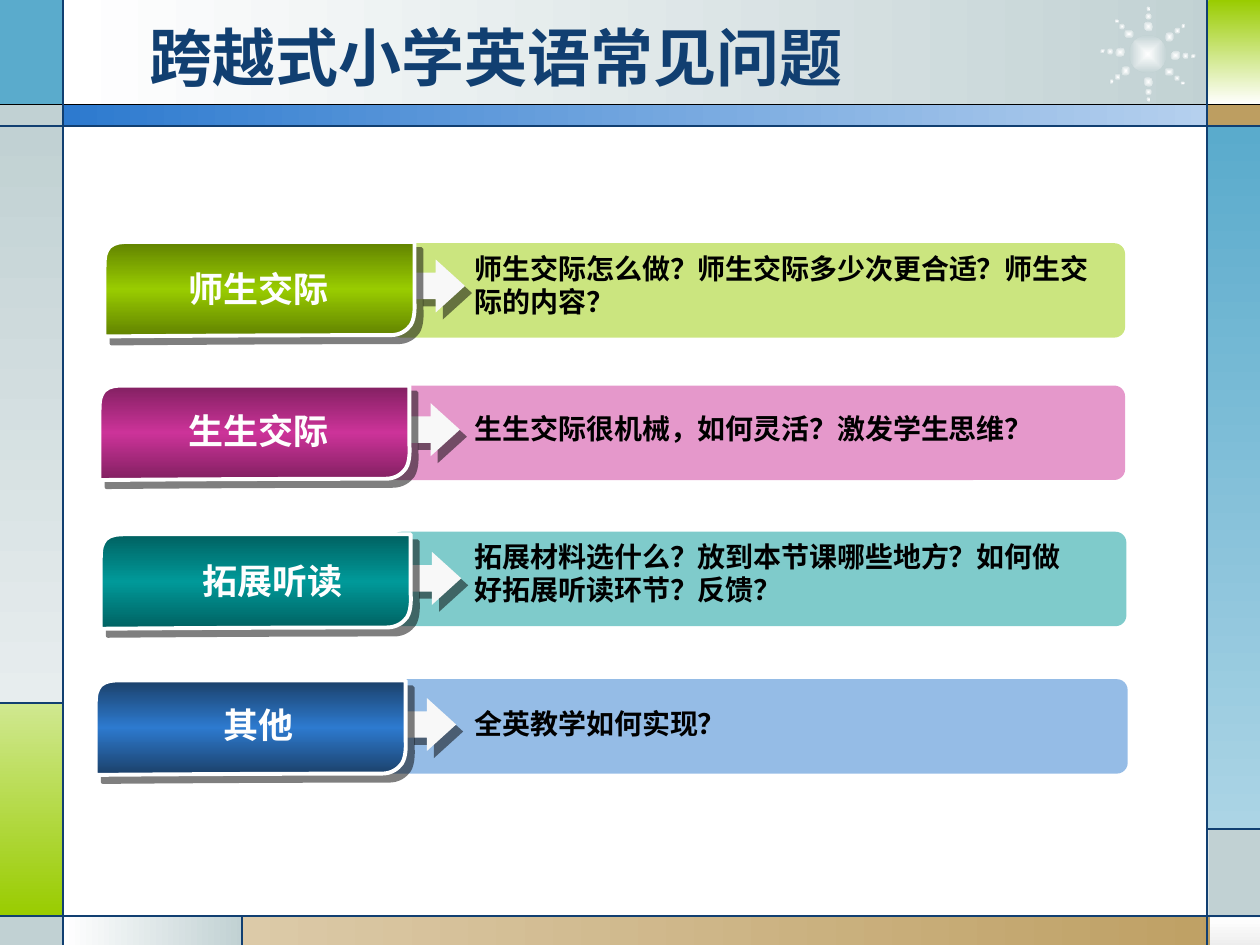
from math import cos, radians, sin

from lxml.etree import SubElement
from pptx import Presentation
from pptx.dml.color import RGBColor
from pptx.enum.shapes import MSO_CONNECTOR, MSO_SHAPE
from pptx.enum.text import MSO_ANCHOR, PP_ALIGN
from pptx.oxml.ns import qn
from pptx.util import Inches, Pt

FONT = "Noto Sans CJK SC"
COLORS = {
    "white": "FFFFFF", "mist": "C1D1D3", "pale mist": "E7EDEE", "sky": "5AABCC",
    "pale sky": "ABD4E5", "lime": "99CC00", "dark lime": "618200", "pale lime": "D0E890",
    "sand": "BD9E61", "pale sand": "DCCAA8", "pearl": "EDEDED", "blue": "2D7ACF",
    "dark blue": "1B4069", "pale blue": "B5D0EE", "pink": "CC3399", "dark pink": "822061",
    "teal": "009999", "dark teal": "006161", "navy": "113F71", "black": "000000",
    "label": "FEFEFE", "arrow": "F8F8F8",
}

presentation = Presentation()
presentation.slide_width = Inches(10)
presentation.slide_height = Inches(7.5)
slide = presentation.slides.add_slide(presentation.slide_layouts[6])
shapes = slide.shapes


def paint(shape, colors, angle=None, alpha=None, shadow=False):
    """Fill with one colour, or with an even gradient (from the centre if angle is None)."""
    shape.line.fill.background()
    shape.shadow.inherit = False
    properties = shape.element.spPr
    if len(colors) == 1:
        shape.fill.solid()
        shape.fill.fore_color.rgb = RGBColor.from_string(COLORS[colors[0]])
        if alpha:
            color = properties.find(qn("a:solidFill"))[0]
            SubElement(color, qn("a:alpha"), val=str(alpha * 1000))
    else:
        shape.fill.gradient()
        gradient = properties.find(qn("a:gradFill"))
        for child in list(gradient):
            gradient.remove(child)
        stops = SubElement(gradient, qn("a:gsLst"))
        for index, name in enumerate(colors):
            position = 100000 * index // (len(colors) - 1)
            stop = SubElement(stops, qn("a:gs"), pos=str(position))
            SubElement(stop, qn("a:srgbClr"), val=COLORS[name])
        if angle is None:
            center = SubElement(gradient, qn("a:path"), {"path": "shape"})
            SubElement(center, qn("a:fillToRect"), dict.fromkeys("ltrb", "50000"))
        else:
            SubElement(gradient, qn("a:lin"), ang=str(angle * 60000), scaled="0")
    if shadow:
        effects = properties.find(qn("a:effectLst"))
        outer = SubElement(effects, qn("a:outerShdw"), dist=str(Pt(5.7)),
                           dir="2700000", algn="ctr", rotWithShape="0")
        color = SubElement(outer, qn("a:srgbClr"), val=COLORS["black"])
        SubElement(color, qn("a:alpha"), val="50000")


def add_text(text, left, top, width, height, size, color, align=PP_ALIGN.LEFT,
             anchor=MSO_ANCHOR.TOP):
    box = shapes.add_textbox(Inches(left), Inches(top), Inches(width), Inches(height))
    frame = box.text_frame
    frame.word_wrap = True
    frame.vertical_anchor = anchor
    paragraph = frame.paragraphs[0]
    paragraph.alignment = align
    paragraph.line_spacing = Pt(round(size * 1.18, 1))
    run = paragraph.add_run()
    run.text = text
    for name, value in {"size": Pt(size), "bold": True, "name": FONT}.items():
        setattr(run.font, name, value)
    run.font.color.rgb = RGBColor.from_string(COLORS[color])
    SubElement(run.font._element, qn("a:ea"), typeface=FONT)


# Frame panels: left, top, width, height, colours, gradient angle
panels = [
    (0.5, 0, 9.27, 0.84, ["white", "mist"], 0),
    (0, 0, 0.5, 0.84, ["sky"], None),
    (0, 0.83, 0.5, 0.17, ["mist"], None),
    (0, 1, 0.5, 4.58, ["mist", "pale mist"], 90),
    (0, 5.58, 0.5, 1.69, ["pale lime", "lime"], 90),
    (0, 7.28, 0.5, 0.23, ["mist"], None),
    (0.5, 7.27, 1.43, 0.24, ["white", "mist"], 0),
    (1.92, 7.27, 8.08, 0.24, ["pale sand", "sand"], 0),
    (9.6, 7.28, 0.4, 0.23, ["white", "pearl"], 90),
    (9.59, 6.58, 0.41, 0.7, ["mist"], None),
    (9.58, 1, 0.42, 5.58, ["sky", "pale sky"], 90),
    (9.58, 0.83, 0.42, 0.17, ["sand"], None),
    (9.59, 0, 0.41, 0.83, ["lime", "white"], 90),
    (0.5, 0.83, 9.09, 0.17, ["blue", "pale blue"], 0),
]
for left, top, width, height, colors, angle in panels:
    panel = shapes.add_shape(MSO_SHAPE.RECTANGLE, Inches(left), Inches(top),
                             Inches(width), Inches(height))
    paint(panel, colors, angle)

# Sun: a disc and eight rays of three shrinking dots (x, y, width, height, rotation)
sun_x, sun_y = 9.11, 0.43
dots = [(sun_x, sun_y, 0.3, 0.3, 2.5)]
for ray in [39.5, 2.5, 321.5, 89, 271, 227, 184, 143]:
    for radius, width, height in [(0.3, 0.05, 0.05), (0.36, 0.04, 0.03), (0.22, 0.08, 0.07)]:
        dots.append((sun_x + radius * cos(radians(ray)), sun_y + radius * sin(radians(ray)),
                     width, height, ray - 36))
for x, y, width, height, rotation in dots:
    dot = shapes.add_shape(MSO_SHAPE.OVAL, Inches(x - width / 2), Inches(y - height / 2),
                           Inches(width), Inches(height))
    dot.rotation = rotation
    paint(dot, ["white", "mist"])

# Frame lines: start x, start y, end x, end y, colour
frame_lines = [
    (0, 0.83, 10, 0.83, "black"),
    (0, 1, 10, 1, "navy"),
    (0, 7.27, 10, 7.27, "navy"),
    (0.5, 0, 0.5, 7.5, "navy"),
    (9.58, 0, 9.58, 7.5, "navy"),
    (0.5, 5.58, 0, 5.58, "navy"),
    (1.92, 7.27, 1.92, 7.5, "navy"),
    (9.58, 6.58, 10, 6.58, "navy"),
]
for start_x, start_y, end_x, end_y, color in frame_lines:
    line = shapes.add_connector(MSO_CONNECTOR.STRAIGHT, Inches(start_x), Inches(start_y),
                                Inches(end_x), Inches(end_y))
    line.line.width = Pt(0.75)
    line.line.color.rgb = RGBColor.from_string(COLORS[color])
    SubElement(line.element.spPr, qn("a:effectLst"))

add_text("跨越式小学英语常见问题", 1.09, 0.14, 7.33, 0.62, 36, "navy", anchor=MSO_ANCHOR.MIDDLE)

# Tab outline from its top left corner
tab_outline = [
    ("moveTo", [(0.19, 0)]),
    ("lnTo", [(2.46, 0)]),
    ("cubicBezTo", [(2.46, 0), (2.46, 0.24), (2.46, 0.48)]),
    ("cubicBezTo", [(2.46, 0.48), (2.47, 0.6), (2.43, 0.66)]),
    ("cubicBezTo", [(2.4, 0.7), (2.35, 0.74), (2.27, 0.74)]),
    ("cubicBezTo", [(1.12, 0.74), (0, 0.75), (0, 0.75)]),
    ("lnTo", [(0, 0.21)]),
    ("cubicBezTo", [(0, 0.1), (0.01, 0.08), (0.04, 0.04)]),
    ("cubicBezTo", [(0.08, 0), (0.15, 0), (0.19, 0)]),
    ("close", []),
]

# Rows: label, its top and width, question, its top, width and height, colour, bar, tab corner
rows = [
    ("拓展听读", 4.4, 2.22, "拓展材料选什么？放到本节课哪些地方？如何做好拓展听读环节？反馈？",
     4.24, 5.04, 0.64, "teal", (3.1, 4.22, 5.84), (0.8, 4.24)),
    ("其他", 5.54, 2.01, "全英教学如何实现？",
     5.56, 5.25, 0.37, "blue", (3.04, 5.39, 5.91), (0.76, 5.4)),
    ("师生交际", 2.08, 2.01, "师生交际怎么做？师生交际多少次更合适？师生交际的内容？",
     1.95, 5.25, 0.64, "lime", (3.1, 1.93, 5.83), (0.83, 1.92)),
    ("生生交际", 3.21, 2.01, "生生交际很机械，如何灵活？激发学生思维？",
     3.22, 5.27, 0.37, "pink", (3.07, 3.06, 5.86), (0.79, 3.06)),
]
for (label, label_top, label_width, question, question_top, question_width, question_height,
     color, (bar_left, bar_top, bar_width), (tab_left, tab_top)) in rows:
    bar = shapes.add_shape(MSO_SHAPE.ROUNDED_RECTANGLE, Inches(bar_left), Inches(bar_top),
                           Inches(bar_width), Inches(0.75))
    bar.adjustments[0] = 0.115
    paint(bar, [color], alpha=50)

    arrow = shapes.add_shape(MSO_SHAPE.RIGHT_ARROW, Inches(tab_left + 2.47),
                             Inches(tab_top + 0.14), Inches(0.39), Inches(0.42))
    arrow.adjustments[1] = 0.594
    paint(arrow, ["arrow"], shadow=True)

    # The builder sets the frame; the curves then replace its straight segments
    right, bottom = Inches(tab_left + 2.47), Inches(tab_top + 0.75)
    builder = shapes.build_freeform(Inches(tab_left), Inches(tab_top))
    builder.add_line_segments([(right, Inches(tab_top)), (right, bottom)])
    tab = builder.convert_to_shape()
    outline = next(tab.element.iter(qn("a:path")))
    for segment in list(outline):
        outline.remove(segment)
    for kind, points in tab_outline:
        segment = SubElement(outline, qn("a:" + kind))
        for x, y in points:
            SubElement(segment, qn("a:pt"), x=str(Inches(x)), y=str(Inches(y)))
    paint(tab, ["dark " + color, color, "dark " + color], 90, shadow=True)
    tab.line.color.rgb = RGBColor.from_string(COLORS["white"])
    tab.line.width = Pt(2.25)

    add_text(label, 1.05, label_top, label_width, 0.44, 20, "label", PP_ALIGN.CENTER)
    add_text(question, 3.67, question_top, question_width, question_height, 16, "black")

presentation.save("out.pptx")
